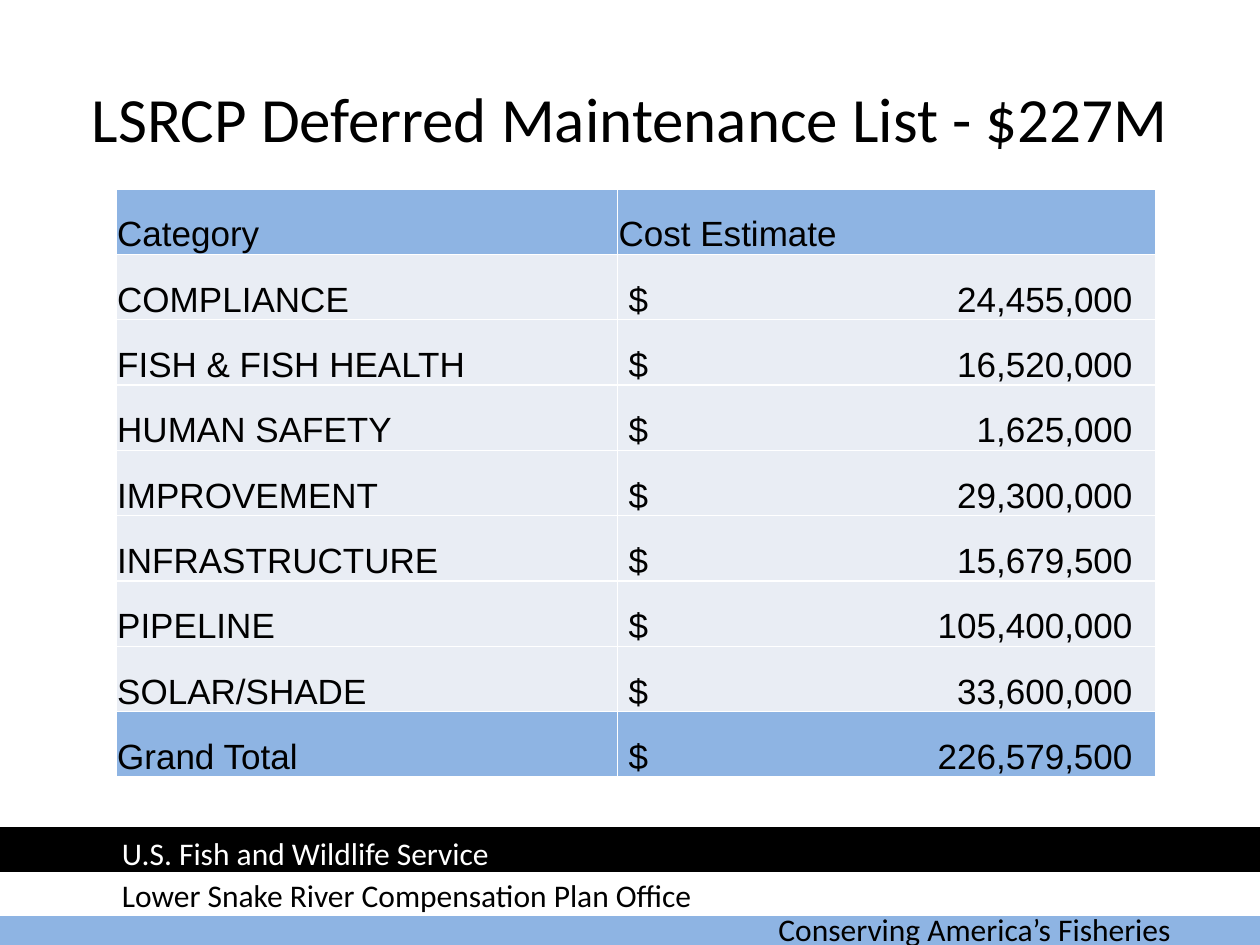
from lxml import etree
from pptx import Presentation
from pptx import util as u
from pptx.dml.color import RGBColor
from pptx.enum import shapes, text
from pptx.oxml import ns

BLACK = RGBColor(0x00, 0x00, 0x00)
WHITE = RGBColor(0xFF, 0xFF, 0xFF)
BLUE = RGBColor(0x8E, 0xB4, 0xE3)
PALE = RGBColor(0xE9, 0xED, 0xF4)


def add_run(paragraph, words, size, font, color):
    run = paragraph.add_run()
    run.text = words
    run.font.size = u.Pt(size)
    run.font.name = font
    run.font.color.rgb = color


def add_borders(cell):
    """Draw a thin white line on all four sides of a table cell."""
    properties = cell._tc.get_or_add_tcPr()
    for side in ("lnL", "lnR", "lnT", "lnB"):
        line = etree.SubElement(properties, ns.qn(f"a:{side}"), w=str(u.Pt(1)))
        fill = etree.SubElement(line, ns.qn("a:solidFill"))
        etree.SubElement(fill, ns.qn("a:srgbClr"), val=str(WHITE))


presentation = Presentation()
presentation.slide_width = u.Inches(10)
presentation.slide_height = u.Inches(7.5)
slide = presentation.slides.add_slide(presentation.slide_layouts[6])

# Footer bands
for left, top, color in ((-0.01, 7.17, BLUE), (0, 6.93, WHITE), (0, 6.58, BLACK)):
    band = slide.shapes.add_shape(
        shapes.MSO_SHAPE.RECTANGLE,
        u.Inches(left), u.Inches(top), u.Inches(10), u.Inches(0.33))
    band.shadow.inherit = False
    band.fill.solid()
    band.fill.fore_color.rgb = color
    band.line.color.rgb = color
    band.line.width = u.Pt(2)

footers = (
    ("Conserving America’s Fisheries", 6.08, 7.17, 3.67, BLACK),
    ("U.S. Fish and Wildlife Service", 0.87, 6.57, 4.16, WHITE),
    ("Lower Snake River Compensation Plan Office", 0.87, 6.9, 4.97, BLACK),
)
for words, left, top, width, color in footers:
    footer = slide.shapes.add_textbox(
        u.Inches(left), u.Inches(top), u.Inches(width), u.Inches(0.4))
    footer.text_frame.word_wrap = True
    footer.text_frame.auto_size = text.MSO_AUTO_SIZE.SHAPE_TO_FIT_TEXT
    add_run(footer.text_frame.paragraphs[0], words, 18, "Calibri", color)

# Title
title = slide.shapes.add_textbox(
    u.Inches(0.5), u.Inches(0.5), u.Inches(9), u.Inches(0.87))
title.text_frame.word_wrap = True
title.text_frame.vertical_anchor = text.MSO_ANCHOR.MIDDLE
heading = title.text_frame.paragraphs[0]
heading.alignment = text.PP_ALIGN.CENTER
add_run(heading, "LSRCP Deferred Maintenance List - $227M", 36, "Calibri", BLACK)

# Cost table
costs = (
    ("COMPLIANCE", 24455000),
    ("FISH & FISH HEALTH", 16520000),
    ("HUMAN SAFETY", 1625000),
    ("IMPROVEMENT", 29300000),
    ("INFRASTRUCTURE", 15679500),
    ("PIPELINE", 105400000),
    ("SOLAR/SHADE", 33600000),
)
total = sum(amount for _, amount in costs)
rows = [("Category", "Cost Estimate")]
rows += [(name, f"$\t{amount:,}") for name, amount in (*costs, ("Grand Total", total))]

table = slide.shapes.add_table(
    len(rows), 2, u.Inches(0.92), u.Inches(1.5), u.Inches(8.25), u.Inches(4.67)).table
table.columns[0].width = u.Inches(3.98)
table.columns[1].width = u.Inches(4.27)

for row_index, row in enumerate(rows):
    for column_index, words in enumerate(row):
        is_amount = "\t" in words
        cell = table.cell(row_index, column_index)
        cell.vertical_anchor = text.MSO_ANCHOR.BOTTOM
        cell.margin_left = u.Inches(0.09 if is_amount else 0.01)
        cell.margin_right = cell.margin_top = u.Inches(0.01)
        cell.margin_bottom = 0
        add_borders(cell)
        cell.fill.solid()
        cell.fill.fore_color.rgb = BLUE if row_index in (0, len(rows) - 1) else PALE
        paragraph = cell.text_frame.paragraphs[0]
        if is_amount:
            tabs = etree.SubElement(paragraph._p.get_or_add_pPr(), ns.qn("a:tabLst"))
            etree.SubElement(tabs, ns.qn("a:tab"), pos=str(u.Inches(4)), algn="r")
        add_run(paragraph, words, 20, "Arial", BLACK)

presentation.save("out.pptx")
